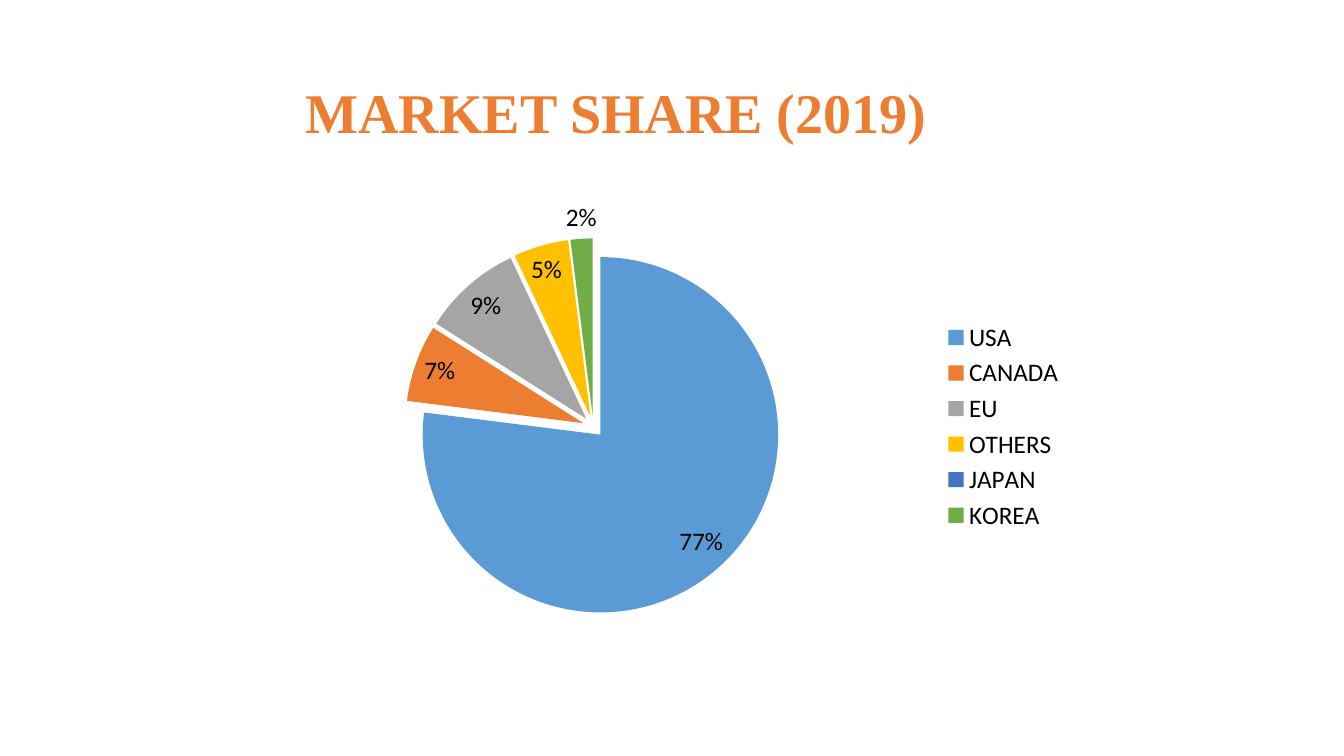
from dataclasses import dataclass

from lxml import etree
from pptx import Presentation
from pptx import util as u
from pptx.chart import data as chart_data
from pptx.dml import color
from pptx.enum import chart as ch
from pptx.enum import text
from pptx.oxml import ns


@dataclass(frozen=True)
class Theme:
    """Colours, fonts and type sizes of the slide."""

    title_font: str = "Times New Roman"
    title_size: int = 40
    title_color: str = "ED7D31"
    body_font: str = "Calibri"
    body_size: int = 18
    body_color: str = "000000"


THEME = Theme()
SHARES = {
    "USA": (77, "5B9BD5"),
    "CANADA": (7, "ED7D31"),
    "EU": (9, "A5A5A5"),
    "OTHERS": (5, "FFC000"),
    "JAPAN": (0, "4472C4"),
    "KOREA": (2, "70AD47"),
}
PLOT_AREA = {"x": 0.065, "y": 0.082, "w": 0.721, "h": 0.838}
EXPLOSION = 6


def set_all(target, values):
    """Set each attribute of the target from a dict."""
    for name, value in values.items():
        setattr(target, name, value)


def set_font(font, name, size, rgb, bold=False):
    """Apply typeface, size, colour and weight to a font."""
    set_all(font, {"name": name, "size": u.Pt(size), "bold": bold})
    font.color.rgb = color.RGBColor.from_string(rgb)


def add_child(parent, tag, value):
    """Append a chart element that carries one value."""
    etree.SubElement(parent, ns.qn(f"c:{tag}")).set("val", str(value))


def place_plot(plot_area):
    """Fix the inner plot area as fractions of the chart."""
    for old in plot_area.findall(ns.qn("c:layout")):
        plot_area.remove(old)
    layout = etree.Element(ns.qn("c:layout"))
    plot_area.insert(0, layout)
    manual = etree.SubElement(layout, ns.qn("c:manualLayout"))
    for tag, value in {"layoutTarget": "inner", "xMode": "edge", "yMode": "edge"}.items():
        add_child(manual, tag, value)
    for tag, value in PLOT_AREA.items():
        add_child(manual, tag, value)


def explode_slices(series):
    """Pull the slices away from the centre of the pie."""
    explosion = etree.Element(ns.qn("c:explosion"))
    explosion.set("val", str(EXPLOSION))
    series._element.find(ns.qn("c:dPt")).addprevious(explosion)
    for point in series._element.findall(ns.qn("c:dPt")):
        slice_explosion = etree.Element(ns.qn("c:explosion"))
        slice_explosion.set("val", str(EXPLOSION))
        point.find(ns.qn("c:spPr")).addprevious(slice_explosion)


def add_title(page, box):
    """Place and format the title in its box."""
    title = page.shapes.title
    set_all(title, dict(zip(("left", "top", "width", "height"), box)))
    set_all(title.text_frame, {"vertical_anchor": text.MSO_ANCHOR.MIDDLE, "word_wrap": True})
    para = title.text_frame.paragraphs[0]
    set_all(para, {"alignment": text.PP_ALIGN.CENTER, "line_spacing": 0.9})
    span = para.add_run()
    span.text = "MARKET SHARE (2019)"
    set_font(span.font, THEME.title_font, THEME.title_size, THEME.title_color, bold=True)


def add_share_pie(page, box):
    """Draw the exploded pie of market shares in its box."""
    data = chart_data.CategoryChartData()
    data.categories = list(SHARES)
    data.add_series("Series 1", [value for value, _ in SHARES.values()])
    chart = page.shapes.add_chart(ch.XL_CHART_TYPE.PIE, *box, data).chart
    set_all(chart, {"has_title": False, "has_legend": True})
    set_font(chart.font, THEME.body_font, THEME.body_size, THEME.body_color)
    set_all(chart.legend, {"position": ch.XL_LEGEND_POSITION.RIGHT, "include_in_layout": False})

    plot = chart.plots[0]
    set_all(plot, {"vary_by_categories": True, "has_data_labels": True})
    set_all(plot.data_labels, {
        "show_percentage": True,
        "show_value": False,
        "number_format": "0%",
        "number_format_is_linked": False,
        "position": ch.XL_LABEL_POSITION.BEST_FIT,
    })
    series = plot.series[0]
    for index, (_, rgb) in enumerate(SHARES.values()):
        fill = series.points[index].format.fill
        fill.solid()
        fill.fore_color.rgb = color.RGBColor.from_string(rgb)
    explode_slices(series)
    place_plot(chart._chartSpace.chart.plotArea)


def main():
    """Build the market share slide and save it."""
    deck = Presentation()
    set_all(deck, {"slide_width": u.Inches(13.33), "slide_height": u.Inches(7.5)})
    page = deck.slides.add_slide(deck.slide_layouts.get_by_name("Title Only"))
    add_title(page, [u.Inches(n) for n in (0.36, 0.42, 11.5, 1.45)])
    add_share_pie(page, [u.Inches(n) for n in (2.35, 2, 8.31, 4.46)])
    deck.save("out.pptx")


if __name__ == "__main__":
    main()
